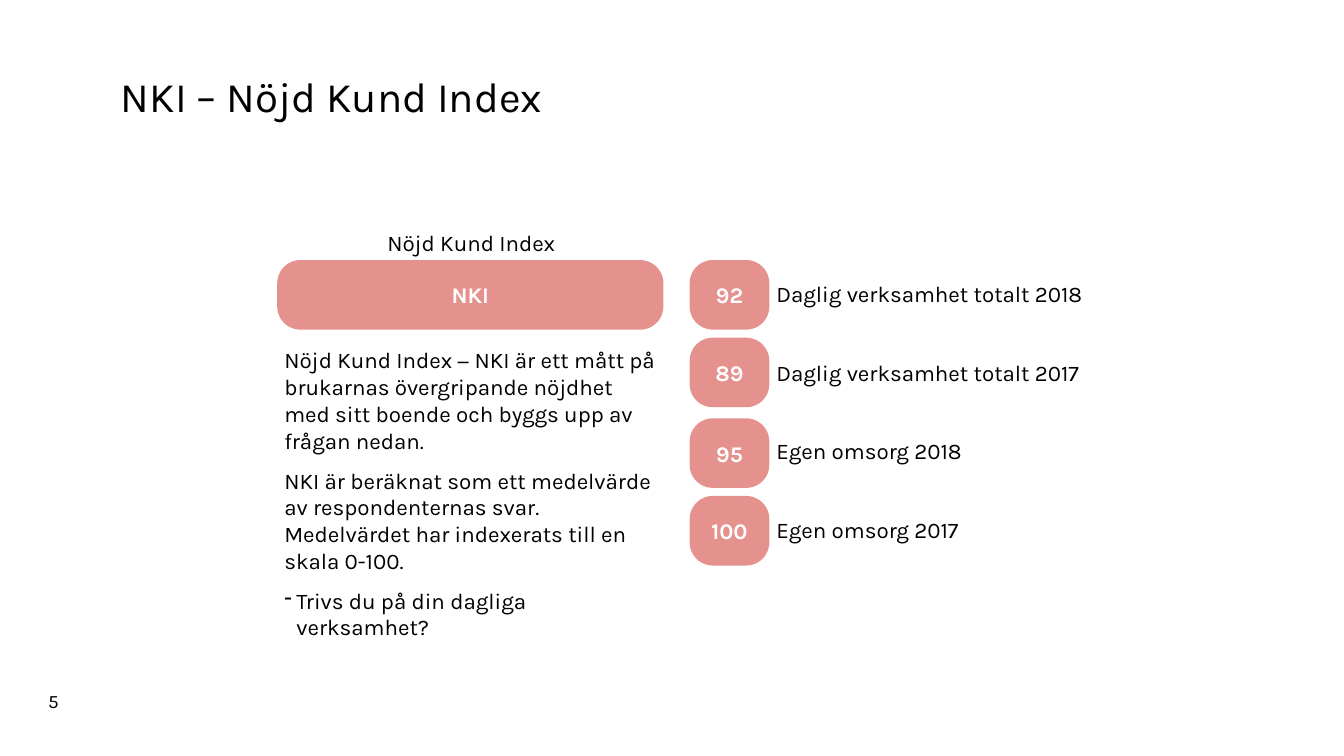
import dataclasses

import lxml.etree
import pptx
import pptx.dml.color
import pptx.enum.shapes
import pptx.enum.text
import pptx.oxml.ns
import pptx.util

Inches = pptx.util.Inches
Pt = pptx.util.Pt
Align = pptx.enum.text.PP_ALIGN
Anchor = pptx.enum.text.MSO_ANCHOR


@dataclasses.dataclass(frozen=True)
class Theme:
    font: str = "Karla"
    ink: str = "000000"
    badge: str = "E5928E"
    badge_text: str = "FFFFFF"
    title_size: float = 30
    body_size: float = 16
    number_size: float = 13.5


theme = Theme()


def write(para, text, size=theme.body_size, color=theme.ink, bold=False):
    span = para.add_run()
    span.text = text
    span.font.name = theme.font
    span.font.size = Pt(size)
    span.font.bold = bold
    span.font.color.rgb = pptx.dml.color.RGBColor.from_string(color)


def add_text_box(left, top, width, height, margins=(0.07, 0.05, 0.05, 0.04)):
    box = page.shapes.add_textbox(Inches(left), Inches(top), Inches(width), Inches(height))
    frame = box.text_frame
    frame.word_wrap = True
    frame.margin_left, frame.margin_top, frame.margin_right, frame.margin_bottom = map(Inches, margins)
    return frame


deck = pptx.Presentation()
deck.slide_width = Inches(13.33)
deck.slide_height = Inches(7.5)
page = deck.slides.add_slide(deck.slide_layouts[6])

# Slide number
number = add_text_box(0.38, 6.79, 0.43, 0.33, (0.1, 0.05, 0.1, 0.05))
number.word_wrap = False
write(number.paragraphs[0], "5", theme.number_size)

# Title
title = add_text_box(1.1, 0.63, 11.38, 0.63, (0.1, 0.05, 0.1, 0.05))
title.vertical_anchor = Anchor.BOTTOM
title.paragraphs[0].line_spacing = 0.9
write(title.paragraphs[0], "NKI – Nöjd Kund Index", theme.title_size)

# Heading and explanation, with room left for the wide badge
explanation = add_text_box(2.75, 2.22, 3.83, 4.04)
heading = explanation.paragraphs[0]
heading.alignment = Align.CENTER
write(heading, "Nöjd Kund Index")
for text, space in [
    ("Nöjd Kund Index − NKI är ett mått på brukarnas övergripande nöjdhet "
     "med sitt boende och byggs upp av frågan nedan.", 65),
    ("NKI är beräknat som ett medelvärde av respondenternas svar. "
     "Medelvärdet har indexerats till en skala 0-100.", 9),
    ("Trivs du på din dagliga verksamhet?", 9),
]:
    para = explanation.add_paragraph()
    para.space_before = Pt(space)
    write(para, text)

# Dash bullet on the survey question
question = explanation.paragraphs[-1]
properties = question._p.get_or_add_pPr()
properties.set("marL", str(Inches(0.12)))
properties.set("indent", str(Inches(-0.12)))
bullet_color = lxml.etree.SubElement(properties, pptx.oxml.ns.qn("a:buClr"))
lxml.etree.SubElement(bullet_color, pptx.oxml.ns.qn("a:srgbClr")).set("val", theme.ink)
lxml.etree.SubElement(properties, pptx.oxml.ns.qn("a:buChar")).set("char", "-")

# Index badges
for text, left, top, width in [
    ("NKI", 2.75, 2.58, 3.83),
    ("92", 6.84, 2.58, 0.79),
    ("89", 6.84, 3.35, 0.79),
    ("95", 6.84, 4.15, 0.79),
    ("100", 6.84, 4.92, 0.79),
]:
    badge = page.shapes.add_shape(
        pptx.enum.shapes.MSO_SHAPE.ROUNDED_RECTANGLE,
        Inches(left), Inches(top), Inches(width), Inches(0.69))
    badge.adjustments[0] = 0.333
    badge.shadow.inherit = False
    badge.fill.solid()
    badge.fill.fore_color.rgb = pptx.dml.color.RGBColor.from_string(theme.badge)
    badge.line.fill.background()
    frame = badge.text_frame
    frame.word_wrap = True
    frame.vertical_anchor = Anchor.MIDDLE
    frame.paragraphs[0].alignment = Align.CENTER
    write(frame.paragraphs[0], text, color=theme.badge_text, bold=True)

# Labels beside the badges
labels = add_text_box(7.63, 2.73, 4.19, 2.88)
for index, text in enumerate([
    "Daglig verksamhet totalt 2018",
    "Daglig verksamhet totalt 2017",
    "Egen omsorg 2018",
    "Egen omsorg 2017",
]):
    para = labels.add_paragraph() if index else labels.paragraphs[0]
    if index:
        para.space_before = Pt(37)
    write(para, text)

deck.save("out.pptx")
